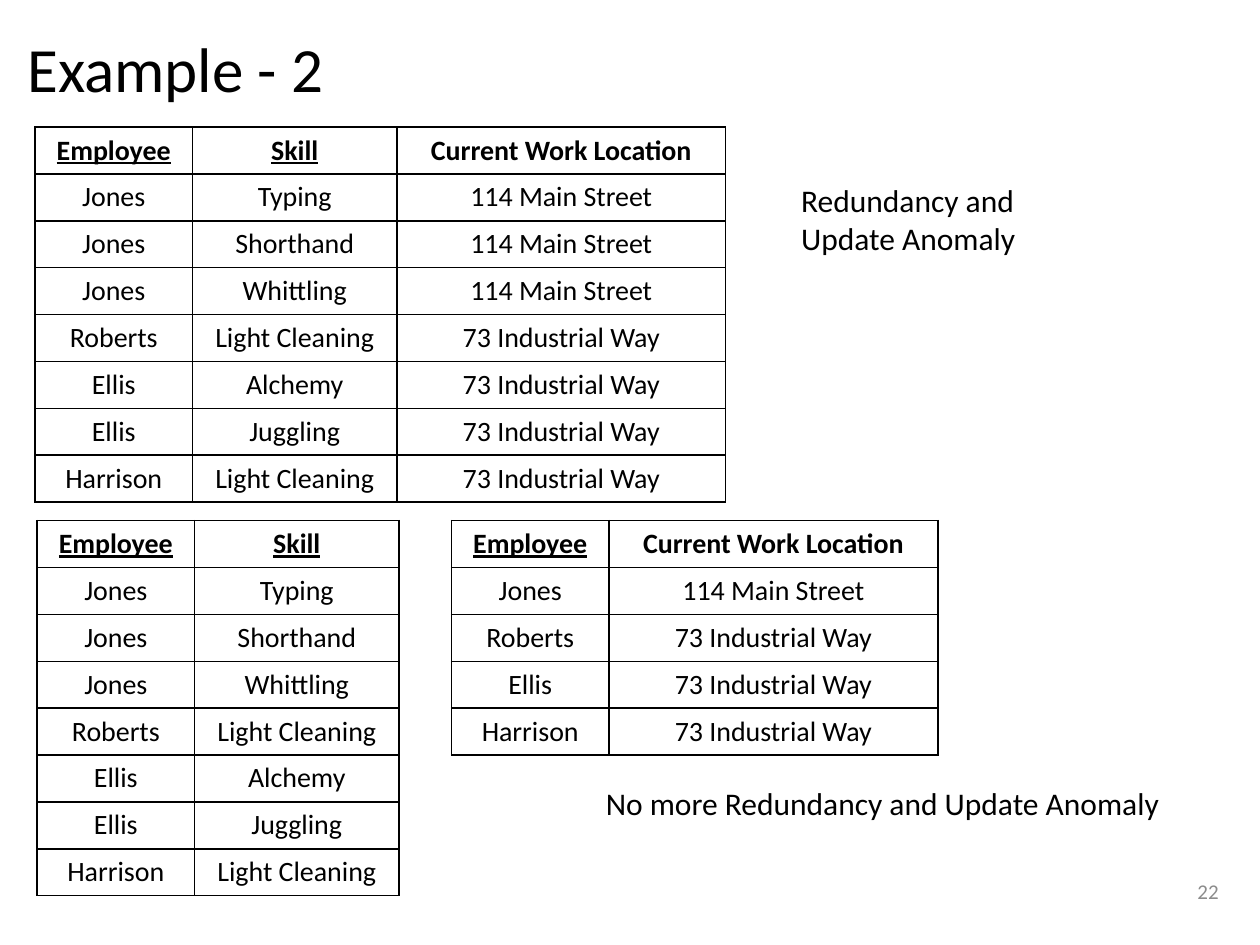
from lxml.etree import SubElement
from pptx import Presentation
from pptx.dml.color import RGBColor
from pptx.enum.text import MSO_ANCHOR as Anchor, PP_ALIGN as Align
from pptx.oxml.ns import qn
from pptx.util import Pt

BLACK = RGBColor(0x00, 0x00, 0x00)
GRAY = RGBColor(0x8C, 0x8C, 0x8C)
FONT = "Calibri"
ROW_HEIGHT = 26.4

COLUMN_WIDTHS = {"Employee": 90, "Skill": 116.8, "Current Work Location": 187.9}
KEYS = ("Employee", "Skill")
RECORDS = [
    ("Jones", "Typing", "114 Main Street"),
    ("Jones", "Shorthand", "114 Main Street"),
    ("Jones", "Whittling", "114 Main Street"),
    ("Roberts", "Light Cleaning", "73 Industrial Way"),
    ("Ellis", "Alchemy", "73 Industrial Way"),
    ("Ellis", "Juggling", "73 Industrial Way"),
    ("Harrison", "Light Cleaning", "73 Industrial Way"),
]
TABLES = [
    (20, 72.6, ("Employee", "Skill", "Current Work Location")),
    (21.2, 297.5, ("Employee", "Skill")),
    (258, 297.5, ("Employee", "Current Work Location")),
]
TEXTS = [
    ("Example - 2", (8.6, 5.8, 702.7, 71.3), 36, BLACK, Align.LEFT, Anchor.MIDDLE, 0.9),
    ("Redundancy and \vUpdate Anomaly", (450.7, 100.1, 226.8, 50.9), 18, BLACK, Align.LEFT, Anchor.TOP, 1),
    ("No more Redundancy and Update Anomaly", (339.1, 444.2, 364.3, 29.1), 18, BLACK, Align.LEFT, Anchor.TOP, 1),
    ("22", (535.7, 491, 167.8, 36), 12, GRAY, Align.RIGHT, Anchor.MIDDLE, 1),
]


def style_font(para, size, color):
    for span in para.runs:
        span.font.name = FONT
        span.font.size = Pt(size)
        span.font.color.rgb = color


def add_text(page, text, place, size, color, align, anchor, spacing):
    frame = page.shapes.add_textbox(*map(Pt, place)).text_frame
    frame.word_wrap = True
    frame.vertical_anchor = anchor
    para = frame.paragraphs[0]
    para.text = text
    para.alignment = align
    para.line_spacing = spacing
    style_font(para, size, color)


def add_borders(cell):
    properties = cell._tc.get_or_add_tcPr()
    for side in ("a:lnL", "a:lnR", "a:lnT", "a:lnB"):
        line = SubElement(properties, qn(side), w=str(Pt(1)))
        fill = SubElement(line, qn("a:solidFill"))
        SubElement(fill, qn("a:srgbClr"), val=str(BLACK))


def fill_cell(cell, text, header):
    cell.text = text
    para = cell.text_frame.paragraphs[0]
    para.alignment = Align.CENTER
    style_font(para, 16, BLACK)
    para.runs[0].font.bold = header
    para.runs[0].font.underline = header and text in KEYS
    add_borders(cell)
    cell.fill.background()


def add_relation(page, left, top, names):
    positions = [list(COLUMN_WIDTHS).index(name) for name in names]
    projected = [tuple(record[i] for i in positions) for record in RECORDS]
    rows = [names, *dict.fromkeys(projected)]
    widths = [COLUMN_WIDTHS[name] for name in names]
    table = page.shapes.add_table(
        len(rows), len(names), Pt(left), Pt(top), Pt(sum(widths)), Pt(ROW_HEIGHT * len(rows))
    ).table
    table.first_row = table.horz_banding = False
    for column, width in zip(table.columns, widths):
        column.width = Pt(width)
    for r, row in enumerate(rows):
        for c, text in enumerate(row):
            fill_cell(table.cell(r, c), text, r == 0)


def main():
    deck = Presentation()
    deck.slide_width, deck.slide_height = Pt(720), Pt(540)
    page = deck.slides.add_slide(deck.slide_layouts[6])
    for relation in TABLES:
        add_relation(page, *relation)
    for text in TEXTS:
        add_text(page, *text)
    deck.save("out.pptx")


if __name__ == "__main__":
    main()
